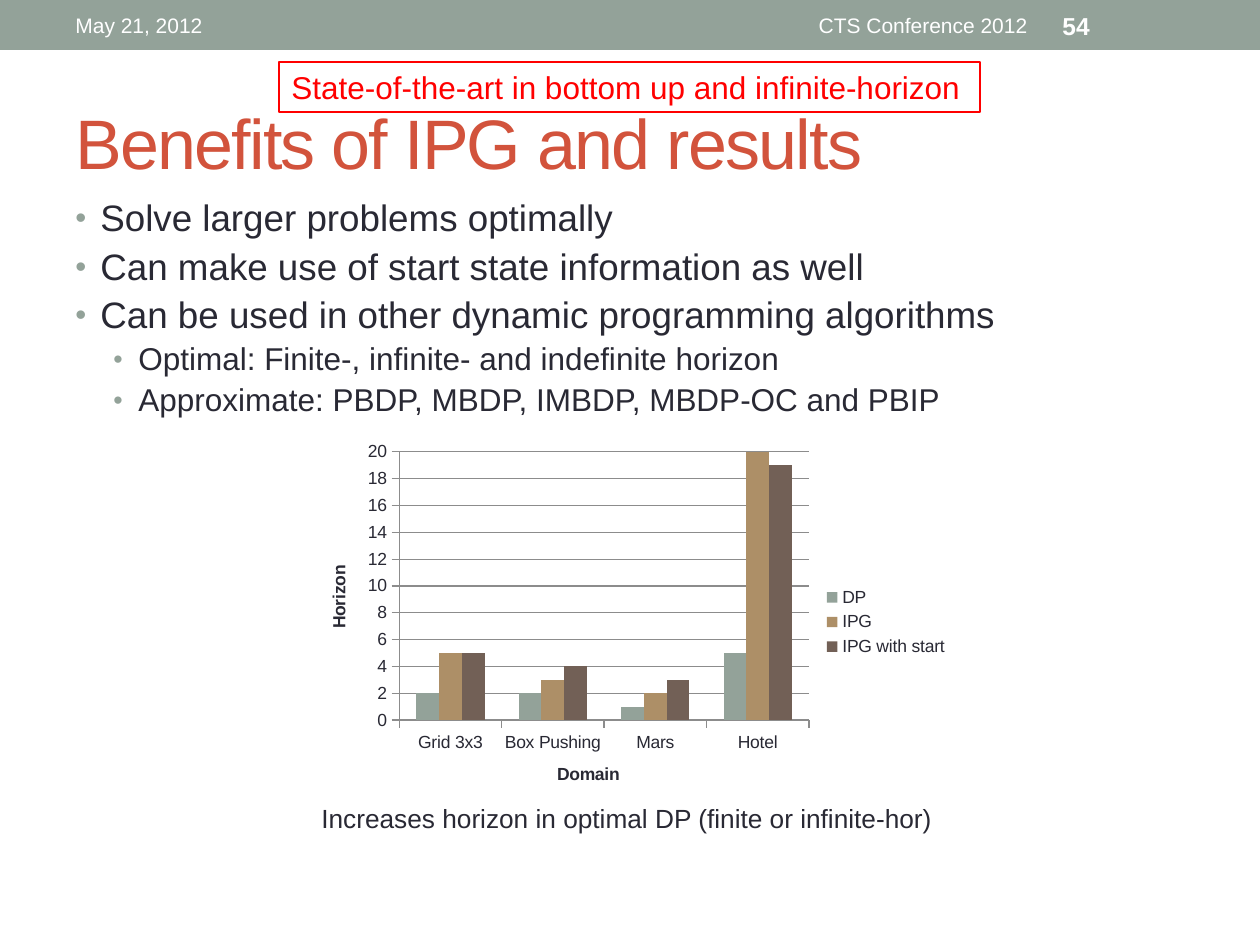
from dataclasses import dataclass

from lxml.etree import SubElement
from pptx import Presentation
from pptx.chart.data import CategoryChartData
from pptx.dml.color import RGBColor
from pptx.enum.chart import XL_CHART_TYPE, XL_LEGEND_POSITION, XL_TICK_MARK
from pptx.enum.shapes import MSO_SHAPE
from pptx.enum.text import MSO_ANCHOR, PP_ALIGN
from pptx.oxml import parse_xml
from pptx.oxml.ns import nsdecls, qn
from pptx.util import Pt

EMU_PER_PX = 914400 / 126
FONT = "Arial"
COLORS = {
    "sage": "93A299", "rust": "D2533C", "ink": "292934", "white": "FFFFFF",
    "red": "FF0000", "tan": "AD8F67", "brown": "726056", "grid": "8C8C8C",
}


@dataclass(frozen=True)
class Label:
    text: str
    box: tuple[int, int, int, int]
    size: int
    color: str
    bold: bool = False
    align: PP_ALIGN = PP_ALIGN.LEFT
    anchor: MSO_ANCHOR = MSO_ANCHOR.MIDDLE
    wrap: bool = True
    spacing: int = 0
    border: str = ""


@dataclass(frozen=True)
class Bullet:
    text: str
    level: int = 0


@dataclass(frozen=True)
class Series:
    name: str
    values: tuple[int, ...]
    color: str


LABELS = [
    Label("Benefits of IPG and results", (63, 73, 1134, 136), 40, "rust", spacing=-100),
    Label("Increases horizon in optimal DP (finite or infinite-hor)",
          (309, 796, 643, 44), 15, "ink", anchor=MSO_ANCHOR.TOP, wrap=False),
    Label("May 21, 2012", (63, 3, 399, 45), 12, "white"),
    Label("CTS Conference 2012", (473, 3, 567, 45), 12, "white", align=PP_ALIGN.RIGHT),
    Label("54", (1050, 3, 147, 45), 14, "white", bold=True),
    Label("State-of-the-art in bottom up and infinite-horizon",
          (279, 62, 701, 50), 18, "red", anchor=MSO_ANCHOR.TOP, wrap=False, border="red"),
]
BULLETS = [
    Bullet("Solve larger problems optimally"),
    Bullet("Can make use of start state information as well"),
    Bullet("Can be used in other dynamic programming algorithms"),
    Bullet("Optimal: Finite-, infinite- and indefinite horizon", 1),
    Bullet("Approximate: PBDP, MBDP, IMBDP, MBDP-OC and PBIP", 1),
]
BULLET_SIZES = (21, 18)
BULLET_GAPS = (5, 4)
BULLET_MARGINS = (25, 63)
DOMAINS = ["Grid 3x3", "Box Pushing", "Mars", "Hotel"]
HORIZONS = [
    Series("DP", (2, 2, 1, 5), "sage"),
    Series("IPG", (5, 3, 2, 20), "tan"),
    Series("IPG with start", (5, 4, 3, 19), "brown"),
]


def px(length: int) -> int:
    return round(length * EMU_PER_PX)


def place(box: tuple[int, int, int, int]) -> list[int]:
    return [px(length) for length in box]


def rgb(name: str) -> RGBColor:
    return RGBColor.from_string(COLORS[name])


def style(font, size: int, color: str, bold: bool = False) -> None:
    font.name = FONT
    font.size = Pt(size)
    font.bold = bold
    font.color.rgb = rgb(color)


def add_label(slide, label: Label) -> None:
    holder = slide.shapes.add_textbox(*place(label.box))
    if label.border:
        holder.line.color.rgb = rgb(label.border)
        holder.line.width = Pt(0.75)
    frame = holder.text_frame
    frame.word_wrap = label.wrap
    frame.vertical_anchor = label.anchor
    frame.text = label.text
    paragraph = frame.paragraphs[0]
    paragraph.alignment = label.align
    run = paragraph.runs[0]
    style(run.font, label.size, label.color, label.bold)
    if label.spacing:
        run.font._element.set("spc", str(label.spacing))


def add_bullets(slide, bullets: list[Bullet], box: tuple[int, int, int, int]) -> None:
    frame = slide.shapes.add_textbox(*place(box)).text_frame
    frame.word_wrap = True
    for index, bullet in enumerate(bullets):
        paragraph = frame.add_paragraph() if index else frame.paragraphs[0]
        paragraph.text = bullet.text
        paragraph.level = bullet.level
        paragraph.line_spacing = 0.9
        if index:
            paragraph.space_before = Pt(BULLET_GAPS[bullet.level])
        props = paragraph._p.get_or_add_pPr()
        props.set("marL", str(px(BULLET_MARGINS[bullet.level])))
        props.set("indent", str(px(-25)))
        bullet_color = SubElement(props, qn("a:buClr"))
        SubElement(bullet_color, qn("a:srgbClr"), val=COLORS["sage"])
        SubElement(props, qn("a:buSzPct"), val="85000")
        SubElement(props, qn("a:buFont"), typeface=FONT)
        SubElement(props, qn("a:buChar"), char="•")
        style(paragraph.runs[0].font, BULLET_SIZES[bullet.level], "ink")


def style_axis(axis, title: str) -> None:
    axis.has_title = True
    axis.axis_title.text_frame.text = title
    style(axis.axis_title.text_frame.paragraphs[0].runs[0].font, 10, "ink", True)
    axis.major_tick_mark = XL_TICK_MARK.OUTSIDE
    axis.minor_tick_mark = XL_TICK_MARK.NONE
    axis.format.line.color.rgb = rgb("grid")


def add_horizon_chart(slide, box: tuple[int, int, int, int]) -> None:
    data = CategoryChartData()
    data.categories = DOMAINS
    for series in HORIZONS:
        data.add_series(series.name, series.values)
    chart = slide.shapes.add_chart(XL_CHART_TYPE.COLUMN_CLUSTERED, *place(box), data).chart
    chart.has_title = False
    style(chart.font, 10, "ink")

    plot = chart.plots[0]
    plot.gap_width = 150
    plot.overlap = 0
    plot.vary_by_categories = False
    for column, series in zip(plot.series, HORIZONS):
        column.format.fill.solid()
        column.format.fill.fore_color.rgb = rgb(series.color)

    style_axis(chart.category_axis, "Domain")
    horizon_axis = chart.value_axis
    style_axis(horizon_axis, "Horizon")
    horizon_axis.minimum_scale = 0
    horizon_axis.maximum_scale = 20
    horizon_axis.major_unit = 2
    horizon_axis.major_gridlines.format.line.color.rgb = rgb("grid")

    chart.has_legend = True
    chart.legend.position = XL_LEGEND_POSITION.RIGHT
    chart.legend.include_in_layout = False

    # Fixed inner plot area
    plot_area = chart._chartSpace.chart.plotArea
    for automatic in plot_area.findall(qn("c:layout")):
        plot_area.remove(automatic)
    parts = "".join(f'<c:{tag} val="{value}"/>' for tag, value in (
        ("layoutTarget", "inner"), ("xMode", "edge"), ("yMode", "edge"),
        ("x", 0.15), ("y", 0.05), ("w", 0.62), ("h", 0.71)))
    plot_area.insert(0, parse_xml(
        f'<c:layout {nsdecls("c")}><c:manualLayout>{parts}</c:manualLayout></c:layout>'))


def main() -> None:
    deck = Presentation()
    deck.slide_width, deck.slide_height = px(1260), px(945)
    slide = deck.slides.add_slide(deck.slide_layouts[6])

    # Header band
    band = slide.shapes.add_shape(MSO_SHAPE.RECTANGLE, *place((0, 0, 1260, 50)))
    band.shadow.inherit = False
    band.fill.solid()
    band.fill.fore_color.rgb = rgb("sage")
    band.line.fill.background()

    # Body and chart
    add_bullets(slide, BULLETS, (63, 194, 1134, 630))
    add_horizon_chart(slide, (300, 433, 661, 378))

    # Title, header texts, caption and callout
    for label in LABELS:
        add_label(slide, label)

    deck.save("out.pptx")


if __name__ == "__main__":
    main()
